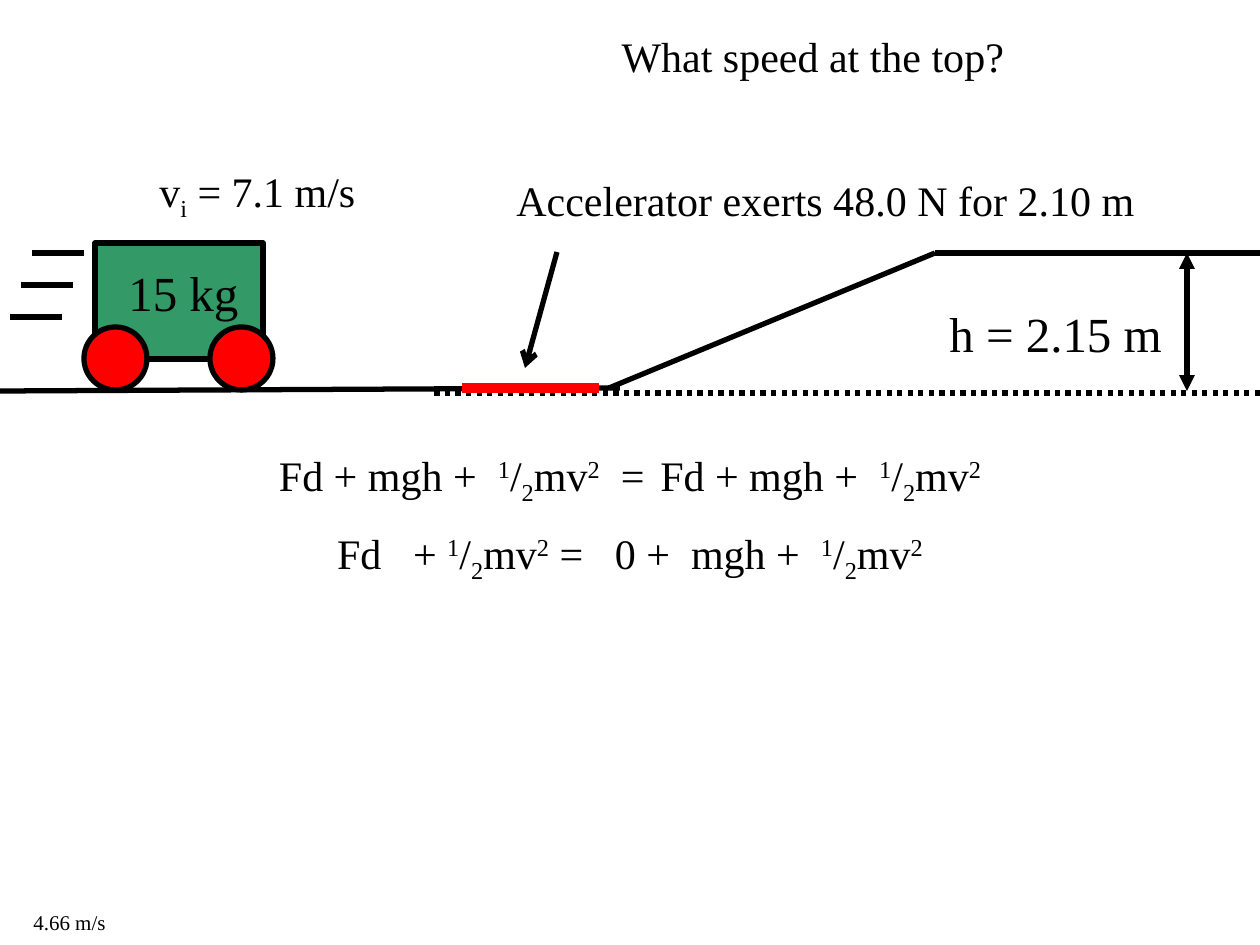
"""Build a physics slide about a cart, an accelerator and a ramp."""
from dataclasses import dataclass
from typing import Any, Optional

import pptx
import pptx.dml.color
import pptx.enum.dml
import pptx.enum.shapes
import pptx.enum.text
import pptx.oxml.ns
import pptx.util
from lxml import etree

PX = 914400 / 126


@dataclass(frozen=True)
class Theme:
    font: str = "Times New Roman"
    ink: str = "000000"
    cart: str = "339966"
    red: str = "FF0000"
    small: int = 12
    body: int = 24
    label: int = 28
    equals_gap: int = 36
    line: int = 3
    thick: int = 6


THEME = Theme()


@dataclass(frozen=True)
class Box:
    left: int
    top: int
    width: int
    height: int

    def emu(self) -> list[pptx.util.Emu]:
        return [px(n) for n in (self.left, self.top, self.width, self.height)]


@dataclass(frozen=True)
class Piece:
    text: str
    baseline: int = 0
    gap: int = 0
    size: Optional[int] = None


@dataclass(frozen=True)
class Label:
    box: Box
    lines: list[list[Piece]]
    size: int = THEME.body
    wrap: bool = False
    centred: bool = False


@dataclass(frozen=True)
class Line:
    x1: int
    y1: int
    x2: int
    y2: int
    color: str = THEME.ink
    width: int = THEME.line
    dotted: bool = False
    head: str = ""
    tail: str = ""


SPACE = Piece(" ", gap=6)
HALF_MV2 = [Piece("1", 30), Piece("/"), Piece("2", -25), Piece("mv"), Piece("2", 30)]
FULL_ENERGY = [Piece("Fd + mgh +"), SPACE, *HALF_MV2]
EQUATIONS = [
    [*FULL_ENERGY, SPACE, Piece("="), Piece(" ", size=THEME.equals_gap), *FULL_ENERGY],
    [Piece("Fd"), Piece(" ", gap=12), Piece("+ "), *HALF_MV2, Piece(" ="),
     Piece(" ", gap=9, size=THEME.equals_gap), Piece("0 +"), SPACE,
     Piece("mgh +"), SPACE, *HALF_MV2],
]

TITLE = Label(Box(609, 24, 651, 63), [[Piece("What speed at the top?")]], wrap=True)
LABELS = [
    Label(Box(21, 903, 98, 38), [[Piece("4.66 m/s")]], THEME.small),
    Label(Box(42, 422, 1176, 199), EQUATIONS, wrap=True, centred=True),
    Label(Box(147, 159, 224, 63), [[Piece("v"), Piece("i", -25), Piece(" = 7.1 m/s")]]),
    Label(Box(937, 297, 238, 72), [[Piece("h = 2.15 m")]], THEME.label),
    Label(Box(116, 256, 136, 72), [[Piece("15 kg")]], THEME.label),
    Label(Box(504, 168, 649, 63), [[Piece("Accelerator exerts 48.0 N for 2.10 m")]]),
]
LINES = [
    Line(935, 253, 1260, 253),
    Line(609, 388, 935, 253),
    Line(0, 391, 620, 388),
    Line(1260, 393, 431, 393, dotted=True),
    Line(1187, 253, 1187, 391, head="triangle", tail="triangle"),
    *[Line(32 - 11 * i, 253 + 32 * i, 84 - 11 * i, 253 + 32 * i) for i in range(3)],
    Line(462, 388, 599, 388, THEME.red, THEME.thick),
    Line(557, 252, 525, 368, tail="arrow"),
]


def px(length: int) -> pptx.util.Emu:
    return pptx.util.Emu(round(length * PX))


def rgb(color: str) -> pptx.dml.color.RGBColor:
    return pptx.dml.color.RGBColor.from_string(color)


def write_label(shape: Any, label: Label) -> None:
    frame = shape.text_frame
    frame.word_wrap = label.wrap
    frame.auto_size = pptx.enum.text.MSO_AUTO_SIZE.NONE
    frame.vertical_anchor = pptx.enum.text.MSO_ANCHOR.TOP
    align = pptx.enum.text.PP_ALIGN
    for index, pieces in enumerate(label.lines):
        paragraph = frame.add_paragraph() if index else frame.paragraphs[0]
        paragraph.alignment = align.CENTER if label.centred else align.LEFT
        paragraph.font.name = THEME.font
        paragraph.font.size = pptx.util.Pt(label.size)
        paragraph.font.color.rgb = rgb(THEME.ink)
        for piece in pieces:
            add_piece(paragraph, piece)


def add_piece(paragraph: Any, piece: Piece) -> None:
    run = paragraph.add_run()
    run.text = piece.text
    if piece.size:
        run.font.size = pptx.util.Pt(piece.size)
    properties = run._r.get_or_add_rPr()
    if piece.baseline:
        properties.set("baseline", str(piece.baseline * 1000))
    if piece.gap:
        properties.set("spc", str(piece.gap * 100))


def add_line(slide: Any, line: Line) -> None:
    connector = slide.shapes.add_connector(
        pptx.enum.shapes.MSO_CONNECTOR.STRAIGHT,
        px(line.x1), px(line.y1), px(line.x2), px(line.y2))
    connector.line.color.rgb = rgb(line.color)
    connector.line.width = pptx.util.Pt(line.width)
    if line.dotted:
        connector.line.dash_style = pptx.enum.dml.MSO_LINE.ROUND_DOT
    outline = connector.line._get_or_add_ln()
    for end, kind in (("a:headEnd", line.head), ("a:tailEnd", line.tail)):
        if kind:
            etree.SubElement(outline, pptx.oxml.ns.qn(end), type=kind)
    etree.SubElement(connector._element.spPr, pptx.oxml.ns.qn("a:effectLst"))


def add_part(group: Any, kind: Any, box: Box, fill: str) -> None:
    shape = group.shapes.add_shape(kind, *box.emu())
    shape.shadow.inherit = False
    shape.fill.solid()
    shape.fill.fore_color.rgb = rgb(fill)
    shape.line.color.rgb = rgb(THEME.ink)
    shape.line.width = pptx.util.Pt(THEME.line)


def add_cart(slide: Any) -> None:
    kinds = pptx.enum.shapes.MSO_SHAPE
    group = slide.shapes.add_group_shape()
    add_part(group, kinds.RECTANGLE, Box(95, 243, 168, 116), THEME.cart)
    for left in (84, 210):
        add_part(group, kinds.OVAL, Box(left, 327, 63, 63), THEME.red)


def main() -> None:
    presentation = pptx.Presentation()
    presentation.slide_width = px(1260)
    presentation.slide_height = px(945)
    slide = presentation.slides.add_slide(presentation.slide_layouts[5])
    title = slide.shapes.title
    title.left, title.top, title.width, title.height = TITLE.box.emu()
    write_label(title, TITLE)
    add_cart(slide)
    for line in LINES:
        add_line(slide, line)
    for label in LABELS:
        write_label(slide.shapes.add_textbox(*label.box.emu()), label)
    presentation.save("out.pptx")


if __name__ == "__main__":
    main()
